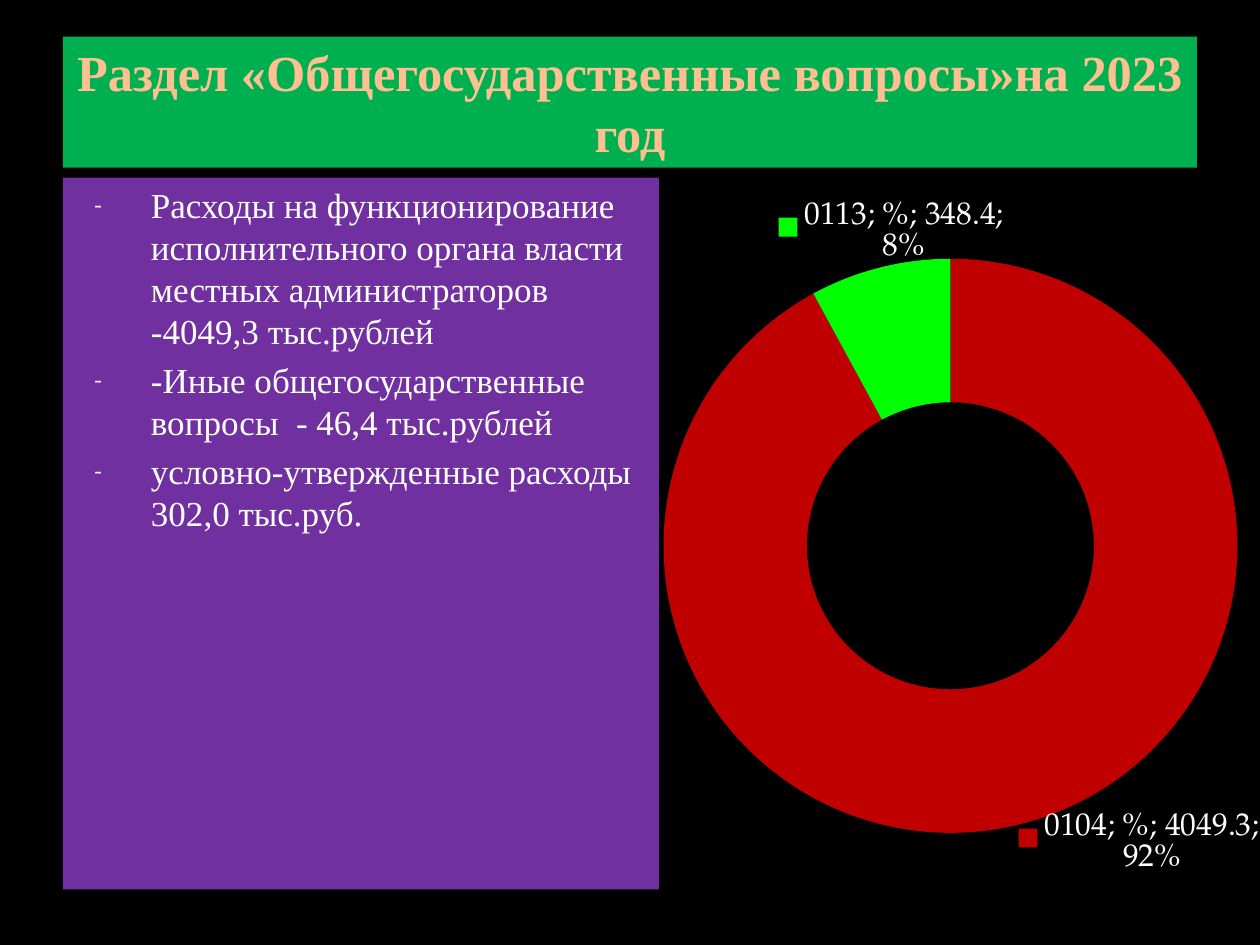
from typing import NamedTuple

from lxml import etree
from pptx import Presentation
from pptx import util as u
from pptx.chart.data import CategoryChartData
from pptx.dml.color import RGBColor
from pptx.enum import chart as ch, shapes, text
from pptx.oxml import parse_xml
from pptx.oxml.ns import nsdecls, qn

SERIF = "Times New Roman"
CHART_FONT = "TeX Gyre Pagella"
WHITE = "FFFFFF"


class Box(NamedTuple):
    left: float
    top: float
    width: float
    height: float

    def lengths(self):
        return [u.Inches(v) for v in self]


class Slice(NamedTuple):
    code: str
    amount: float
    color: str
    label_shift: tuple[float, float]


TITLE = "Раздел «Общегосударственные вопросы»на 2023 год"
EXPENSES = [
    "Расходы на функционирование исполнительного органа власти "
    "местных администраторов -4049,3 тыс.рублей",
    "-Иные общегосударственные вопросы  - 46,4 тыс.рублей",
    "условно-утвержденные расходы 302,0 тыс.руб.",
]
SLICES = [
    Slice("0104", 4049.3, "C00000", (0.23, 0.13)),
    Slice("0113", 348.4, "00FF00", (-0.01, -0.15)),
]


def rgb(color: str) -> RGBColor:
    return RGBColor.from_string(color)


def paint(fill, color: str) -> None:
    fill.solid()
    fill.fore_color.rgb = rgb(color)


def add_panel(s, box: Box, color: str, anchor):
    sp = s.shapes.add_shape(shapes.MSO_SHAPE.RECTANGLE, *box.lengths())
    sp.shadow.inherit = False
    paint(sp.fill, color)
    sp.line.fill.background()
    tf = sp.text_frame
    tf.word_wrap = True
    tf.vertical_anchor = anchor
    return tf


def write(p, content: str, *, size: float, color: str, bold=False,
          align=text.PP_ALIGN.LEFT, before: float = 0) -> None:
    p.alignment = align
    p.space_before = u.Pt(before)
    r = p.add_run()
    r.text = content
    r.font.name = SERIF
    r.font.size = u.Pt(size)
    r.font.bold = bold
    r.font.color.rgb = rgb(color)


def add_dash(p) -> None:
    """Give the paragraph a small hanging dash bullet."""
    pPr = p._p.get_or_add_pPr()
    pPr.set("marL", str(u.Inches(0.6)))
    pPr.set("indent", str(u.Inches(-0.45)))
    color = etree.SubElement(pPr, qn("a:buClr"))
    etree.SubElement(color, qn("a:srgbClr"), val="F9F9F9")
    etree.SubElement(pPr, qn("a:buSzPct"), val="65000")
    etree.SubElement(pPr, qn("a:buFont"), typeface=SERIF)
    etree.SubElement(pPr, qn("a:buChar"), char="-")


def shifted_label(index: int, shift: tuple[float, float]):
    """Return a full data label moved by fractions of the chart size."""
    shown = "".join(f'<c:show{part} val="{value}"/>' for part, value in (
        ("LegendKey", 1), ("Val", 1), ("CatName", 1),
        ("SerName", 1), ("Percent", 1), ("BubbleSize", 0)))
    x, y = shift
    return parse_xml(
        f'<c:dLbl {nsdecls("c")}><c:idx val="{index}"/>'
        f'<c:layout><c:manualLayout><c:x val="{x}"/><c:y val="{y}"/>'
        f'</c:manualLayout></c:layout>{shown}'
        f'<c:separator>; </c:separator></c:dLbl>')


def set_plot_layout(chart, box: Box) -> None:
    area = chart._chartSpace.chart.plotArea
    for old in area.findall(qn("c:layout")):
        area.remove(old)
    sizes = "".join(f'<c:{k} val="{v}"/>' for k, v in zip("xywh", box))
    area.insert(0, parse_xml(
        f'<c:layout {nsdecls("c")}><c:manualLayout>'
        f'<c:layoutTarget val="inner"/><c:xMode val="edge"/>'
        f'<c:yMode val="edge"/>{sizes}</c:manualLayout></c:layout>'))


def add_doughnut(s, box: Box, slices: list[Slice]) -> None:
    data = CategoryChartData()
    data.categories = [item.code for item in slices]
    data.add_series("%", [item.amount for item in slices])
    chart = s.shapes.add_chart(
        ch.XL_CHART_TYPE.DOUGHNUT, *box.lengths(), data).chart
    chart.has_legend = False
    chart.has_title = False
    chart.font.name = CHART_FONT
    chart.font.size = u.Pt(18)
    chart.font.color.rgb = rgb(WHITE)
    set_plot_layout(chart, Box(0.01, 0.09, 0.99, 0.83))

    plot = chart.plots[0]
    plot.vary_by_categories = True
    plot._element.find(qn("c:holeSize")).set("val", "50")
    series = plot.series[0]
    labels = series.data_labels
    labels.show_legend_key = labels.show_value = True
    labels.show_category_name = labels.show_series_name = True
    labels.show_percentage = True
    for i, item in enumerate(slices):
        point = series.points[i]
        paint(point.format.fill, item.color)
        point.format.line.fill.background()
        labels._element.insert(i, shifted_label(i, item.label_shift))


def main() -> None:
    prs = Presentation()
    prs.slide_width, prs.slide_height = u.Inches(10), u.Inches(7.5)
    s = prs.slides.add_slide(prs.slide_layouts[6])
    paint(s.background.fill, "000000")

    tf = add_panel(s, Box(0.5, 0.29, 9, 1.04), "00B050",
                   text.MSO_ANCHOR.MIDDLE)
    write(tf.paragraphs[0], TITLE, size=28.8, color="FFC091", bold=True,
          align=text.PP_ALIGN.CENTER)

    tf = add_panel(s, Box(0.5, 1.41, 4.73, 5.65), "7030A0",
                   text.MSO_ANCHOR.TOP)
    for i, expense in enumerate(EXPENSES):
        p = tf.add_paragraph() if i else tf.paragraphs[0]
        write(p, expense, size=20, color=WHITE, before=4)
        add_dash(p)

    add_doughnut(s, Box(5.04, 1.56, 4.96, 5.49), SLICES)
    prs.save("out.pptx")


if __name__ == "__main__":
    main()
